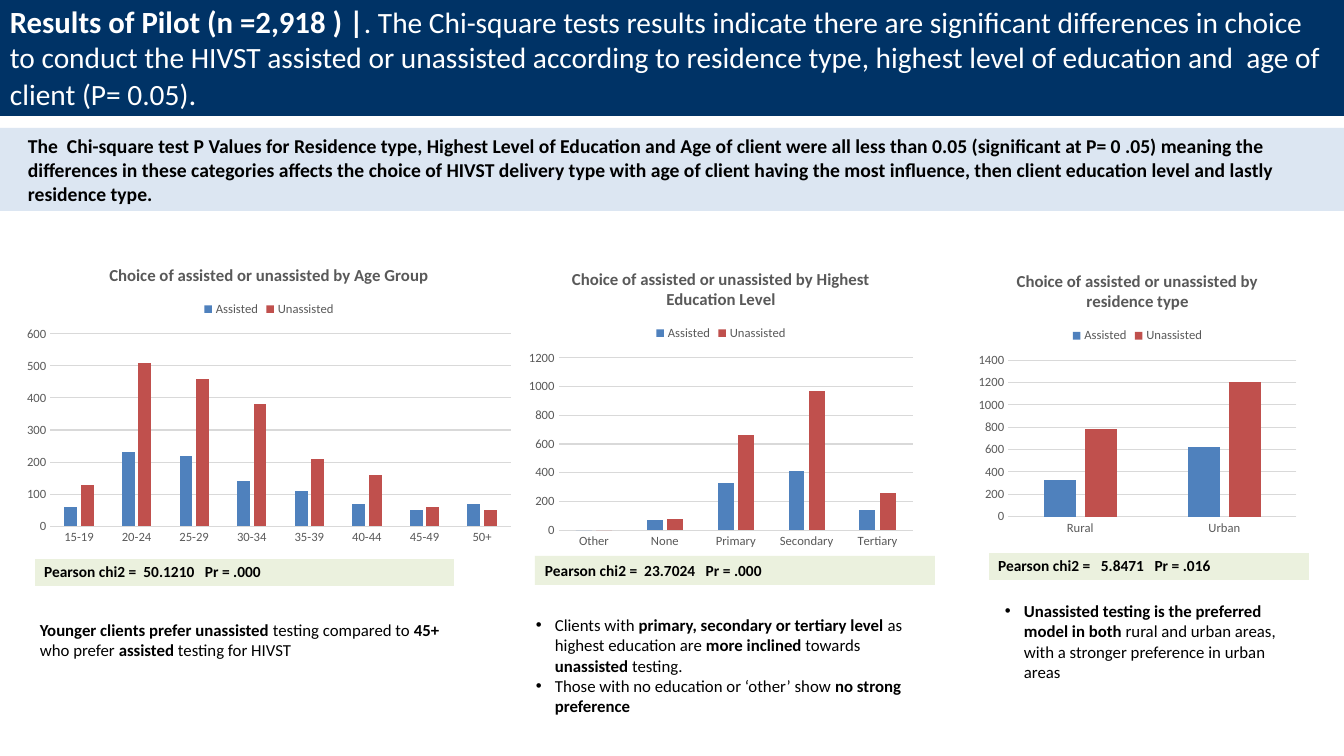
"""Build the pilot results slide: three choice charts with chi-square findings."""
from lxml import etree
from pptx import Presentation
from pptx.chart.data import CategoryChartData
from pptx.dml.color import RGBColor
from pptx.enum.chart import XL_CHART_TYPE as ChartType, XL_LEGEND_POSITION as LegendPosition, XL_TICK_MARK as Tick
from pptx.enum.shapes import MSO_SHAPE as Preset
from pptx.enum.text import MSO_ANCHOR as Anchor, PP_ALIGN as Align
from pptx.oxml.ns import qn
from pptx.util import Pt

PX = 914400 / 100.8
FONT = "Calibri"
NAVY, PALE_BLUE, PALE_GREEN = "003366", "DCE6F2", "EBF1DE"
WHITE, BLACK, GREY, GRID = "FFFFFF", "000000", "595959", "D9D9D9"

HEADLINE = [
    ("Results of Pilot (n =2,918 ) |", True, 22),
    (". The Chi-square tests results indicate there are significant differences in choice "
     "to conduct the HIVST assisted or unassisted according to residence type, highest level "
     "of education and  age of client (P= 0.05)", False, 21),
    (".", False, 22),
]
SUMMARY = [(
    "The  Chi-square test P Values for Residence type, Highest Level of Education and Age of "
    "client were all less than 0.05 (significant at P= 0 .05) meaning the differences in these "
    "categories affects the choice of HIVST delivery type with age of client having the most "
    "influence, then client education level and lastly residence type.", True, 14)]

CHARTS = [
    {"at": (17, 249, 504, 302), "title": "Choice of assisted or unassisted by Age Group",
     "groups": ["15-19", "20-24", "25-29", "30-34", "35-39", "40-44", "45-49", "50+"],
     "assisted": [60, 230, 220, 140, 110, 70, 50, 70],
     "unassisted": [130, 510, 460, 380, 210, 160, 60, 50], "top": 600, "step": 100},
    {"at": (521, 253, 400, 302), "title": "Choice of assisted or unassisted by Highest Education Level",
     "groups": ["Other", "None", "Primary", "Secondary", "Tertiary"],
     "assisted": [0, 70, 330, 410, 140],
     "unassisted": [0, 80, 660, 970, 260], "top": 1200, "step": 200},
    {"at": (972, 256, 331, 285), "title": "Choice of assisted or unassisted by residence type",
     "groups": ["Rural", "Urban"],
     "assisted": [330, 620], "unassisted": [780, 1200], "top": 1400, "step": 200},
]
SERIES_COLOURS = ["4F81BD", "C0504D"]

TEST_TABLES = [
    ((34, 558, 421, 28), "Pearson chi2 =  50.1210   Pr = .000"),
    ((988, 552, 322, 28), "Pearson chi2 =   5.8471   Pr = .016"),
]
TEST_BAND = ((535, 556, 400, 29), "Pearson chi2 =  23.7024   Pr = .000")

FINDINGS = [
    ((30, 615, 424, 50), False, [
        [("Younger clients prefer unassisted ", True), ("testing compared to ", False), ("45+ ", True),
         ("who prefer ", False), ("assisted", True), (" testing for HIVST", False)]]),
    ((526, 610, 404, 112), True, [
        [("Clients with ", False), ("primary, secondary or tertiary level ", True),
         ("as highest education are ", False), ("more inclined ", True), ("towards ", False),
         ("unassisted", True), (" testing.", False)],
        [("Those with no education or ‘other’ show ", False), ("no strong preference", True)]]),
    ((995, 596, 308, 92), True, [
        [("Unassisted testing is the preferred model in both ", True),
         ("rural and urban areas, with a stronger preference in urban areas", False)]]),
]


def px(length):
    return round(length * PX)


def place(at):
    return [px(length) for length in at]


def colour(code):
    return RGBColor.from_string(code)


def style(font, size, code, bold=False):
    font.name, font.size, font.bold = FONT, Pt(size), bold
    font.color.rgb = colour(code)


def add_runs(para, runs, code=BLACK):
    para.alignment = Align.LEFT
    for text, bold, size in runs:
        span = para.add_run()
        span.text = text
        style(span.font, size, code, bold)


def add_band(page, at, fill):
    band = page.shapes.add_shape(Preset.RECTANGLE, *place(at))
    band.shadow.inherit = False
    band.fill.solid()
    band.fill.fore_color.rgb = colour(fill)
    band.line.fill.background()
    band.text_frame.word_wrap = True
    band.text_frame.vertical_anchor = Anchor.TOP
    return band.text_frame


def add_bullet(para):
    props = para._p.get_or_add_pPr()
    props.set("marL", str(px(19)))
    props.set("indent", str(-px(19)))
    etree.SubElement(props, qn("a:buFont")).set("typeface", "Arial")
    etree.SubElement(props, qn("a:buChar")).set("char", "•")


def add_finding(page, at, bulleted, paragraphs):
    frame = page.shapes.add_textbox(*place(at)).text_frame
    frame.word_wrap = True
    for index, parts in enumerate(paragraphs):
        para = frame.add_paragraph() if index else frame.paragraphs[0]
        if bulleted:
            add_bullet(para)
        add_runs(para, [(text, bold, 12) for text, bold in parts])


def add_test_table(page, at, text):
    table = page.shapes.add_table(1, 1, *place(at)).table
    table.first_row = table.horz_banding = False
    cell = table.cell(0, 0)
    cell.fill.solid()
    cell.fill.fore_color.rgb = colour(PALE_GREEN)
    add_runs(cell.text_frame.paragraphs[0], [(text, True, 11)])


def add_choice_chart(page, info):
    data = CategoryChartData()
    data.categories = info["groups"]
    data.add_series("Assisted", info["assisted"])
    data.add_series("Unassisted", info["unassisted"])
    chart = page.shapes.add_chart(ChartType.COLUMN_CLUSTERED, *place(info["at"]), data).chart
    style(chart.font, 10, BLACK)
    chart.has_title = True
    add_runs(chart.chart_title.text_frame.paragraphs[0], [(info["title"], True, 12)], GREY)
    chart.chart_title.text_frame.paragraphs[0].alignment = Align.CENTER
    chart.chart_title.include_in_layout = False
    chart.has_legend = True
    chart.legend.position = LegendPosition.TOP
    chart.legend.include_in_layout = False
    style(chart.legend.font, 9, GREY)

    plot = chart.plots[0]
    plot.gap_width, plot.overlap, plot.vary_by_categories = 219, -27, False
    for series, code in zip(plot.series, SERIES_COLOURS):
        series.format.fill.solid()
        series.format.fill.fore_color.rgb = colour(code)

    groups, values = chart.category_axis, chart.value_axis
    for axis in (groups, values):
        axis.major_tick_mark = axis.minor_tick_mark = Tick.NONE
        style(axis.tick_labels.font, 9, GREY)
    values.minimum_scale, values.maximum_scale, values.major_unit = 0, info["top"], info["step"]
    values.format.line.fill.background()
    for line in (groups.format.line, values.major_gridlines.format.line):
        line.color.rgb = colour(GRID)
        line.width = Pt(0.75)


def main():
    deck = Presentation()
    deck.slide_width, deck.slide_height = px(1344), px(756)
    page = deck.slides.add_slide(deck.slide_layouts[6])

    add_band(page, (0, -2, 1344, 118), NAVY)
    headline = page.shapes.add_textbox(*place((0, 5, 1336, 104))).text_frame
    headline.word_wrap = True
    headline.vertical_anchor = Anchor.MIDDLE
    add_runs(headline.paragraphs[0], HEADLINE, WHITE)

    summary = add_band(page, (0, 128, 1344, 83), PALE_BLUE).paragraphs[0]
    summary._p.get_or_add_pPr().set("marL", str(px(18)))
    summary.line_spacing = 1.03
    add_runs(summary, SUMMARY)

    for info in CHARTS:
        add_choice_chart(page, info)
    for at, text in TEST_TABLES:
        add_test_table(page, at, text)
    at, text = TEST_BAND
    add_runs(add_band(page, at, PALE_GREEN).paragraphs[0], [(text, True, 11)])
    for finding in FINDINGS:
        add_finding(page, *finding)
    deck.save("out.pptx")


if __name__ == "__main__":
    main()
